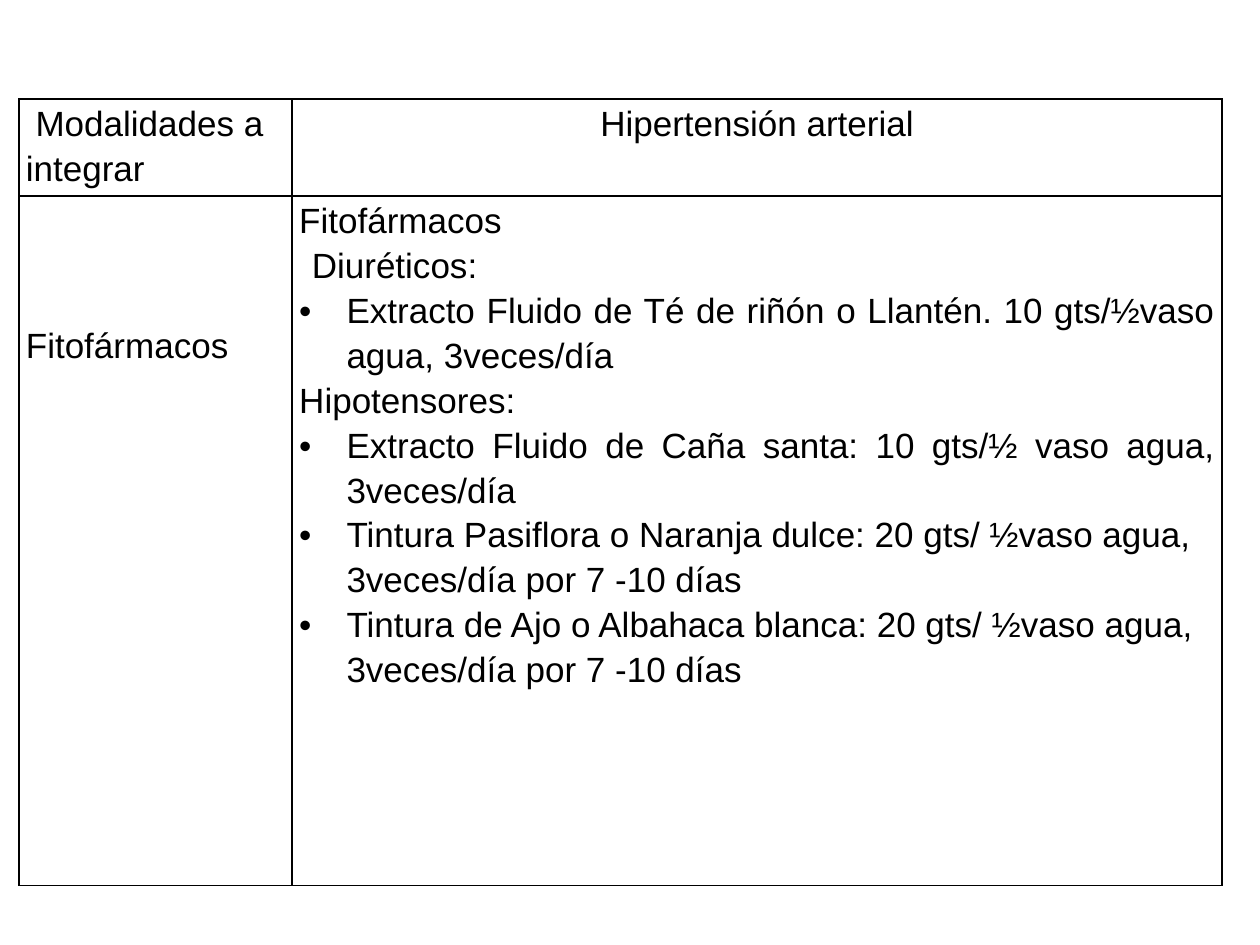
from lxml import etree
from pptx import Presentation
from pptx.dml.color import RGBColor
from pptx.enum import text
from pptx.oxml import ns
from pptx.util import Pt

BLACK = RGBColor(0, 0, 0)
LEFT = text.PP_ALIGN.LEFT
MID = text.PP_ALIGN.CENTER
JUST = text.PP_ALIGN.JUSTIFY
HANG = 27

HEAD = [("Modalidades a integrar", LEFT, 5.5, False)]
TOPIC = [("Hipertensión arterial", MID, 0, False)]
MODE = [("Fitofármacos", LEFT, 0, False)]
PLAN = [
    ("Fitofármacos", JUST, 0, False),
    ("Diuréticos:", JUST, 7.2, False),
    ("Extracto Fluido de Té de riñón o Llantén. 10 gts/½vaso agua, 3veces/día", JUST, 0, True),
    ("Hipotensores:", JUST, 0, False),
    ("Extracto Fluido de Caña santa: 10 gts/½ vaso agua, 3veces/día", JUST, 0, True),
    ("Tintura Pasiflora o Naranja dulce: 20 gts/ ½vaso agua, 3veces/día por 7 -10 días", LEFT, 0, True),
    ("Tintura de Ajo o Albahaca blanca: 20 gts/ ½vaso agua, 3veces/día por 7 -10 días", LEFT, 0, True),
]


def add_line(para, words, align, dent, dot):
    para.alignment = align
    para.line_spacing = 1.15
    props = para._p.get_or_add_pPr()
    if dot:
        props.set("marL", str(Pt(HANG)))
        props.set("indent", str(Pt(-HANG)))
        etree.SubElement(props, ns.qn("a:buFont"), typeface="Arial")
        etree.SubElement(props, ns.qn("a:buChar"), char="•")
    elif dent:
        props.set("indent", str(Pt(dent)))
    run = para.add_run()
    run.text = words
    run.font.name = "Arial"
    run.font.size = Pt(20)
    run.font.color.rgb = BLACK


def add_edges(cell):
    props = cell._tc.get_or_add_tcPr()
    for side in ("lnL", "lnR", "lnT", "lnB"):
        edge = etree.SubElement(props, ns.qn("a:" + side), w=str(Pt(1)))
        fill = etree.SubElement(edge, ns.qn("a:solidFill"))
        etree.SubElement(fill, ns.qn("a:srgbClr"), val=str(BLACK))


def fill_cell(cell, lines, top=0):
    add_edges(cell)
    cell.fill.background()
    cell.margin_left = cell.margin_right = Pt(4)
    cell.margin_top = Pt(top)
    cell.margin_bottom = Pt(0)
    frame = cell.text_frame
    for i, line in enumerate(lines):
        para = frame.add_paragraph() if i else frame.paragraphs[0]
        add_line(para, *line)


def add_grid(slide, left, top, width, height):
    side, head = 156.2, 55.4
    frame = slide.shapes.add_table(2, 2, Pt(left), Pt(top), Pt(width), Pt(height))
    grid = frame.table
    grid.first_row = grid.horz_banding = False
    for col, size in zip(grid.columns, (side, width - side)):
        col.width = Pt(size)
    for row, size in zip(grid.rows, (head, height - head)):
        row.height = Pt(size)
    fill_cell(grid.cell(0, 0), HEAD)
    fill_cell(grid.cell(0, 1), TOPIC)
    fill_cell(grid.cell(1, 0), MODE, top=71.4)
    fill_cell(grid.cell(1, 1), PLAN)


def main():
    deck = Presentation()
    deck.slide_width, deck.slide_height = Pt(720), Pt(540)
    slide = deck.slides.add_slide(deck.slide_layouts[6])
    add_grid(slide, 10.8, 56.7, 687.6, 449.2)
    deck.save("out.pptx")


if __name__ == "__main__":
    main()
